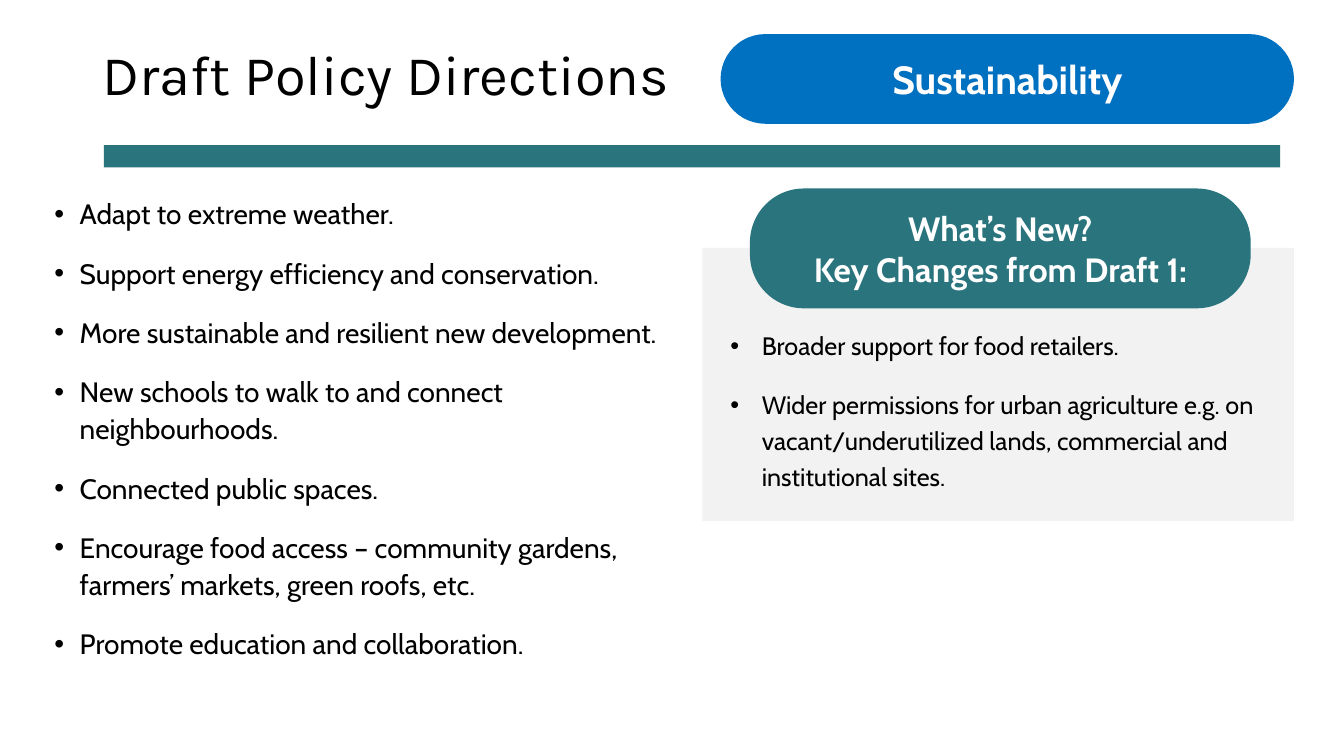
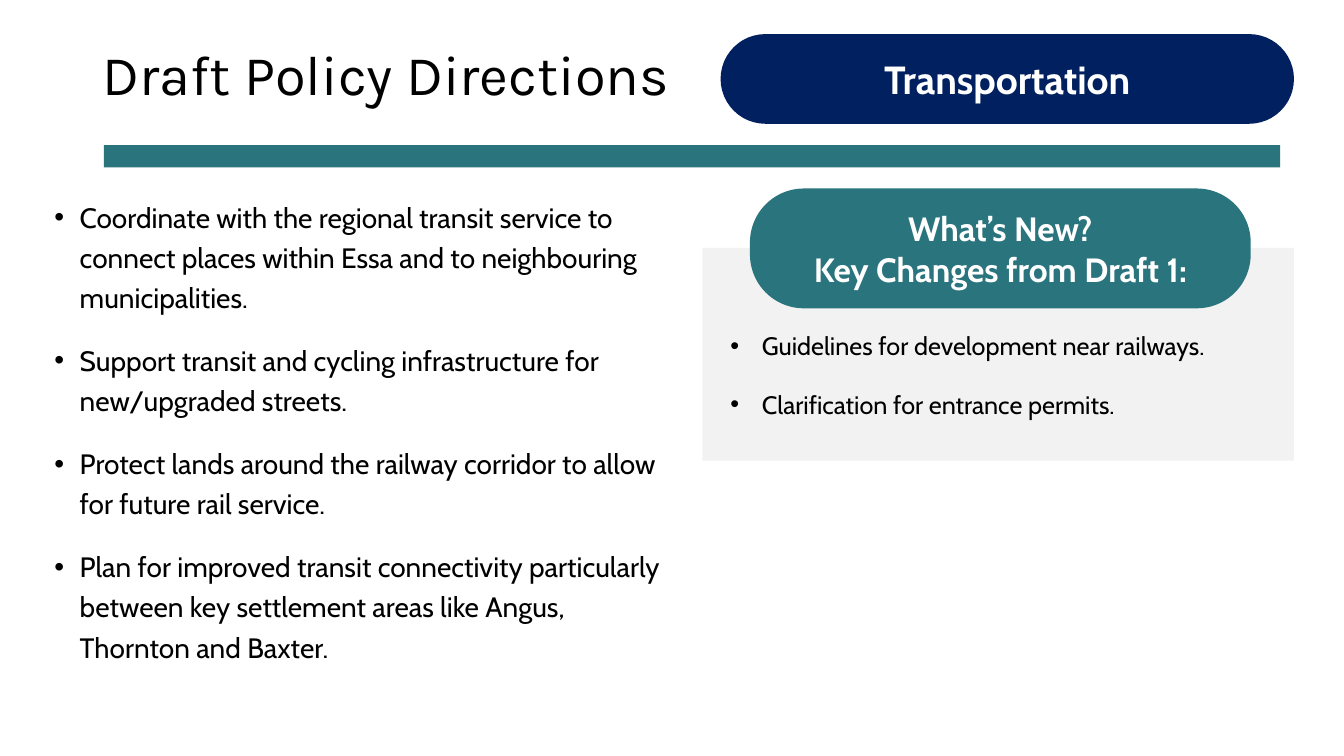
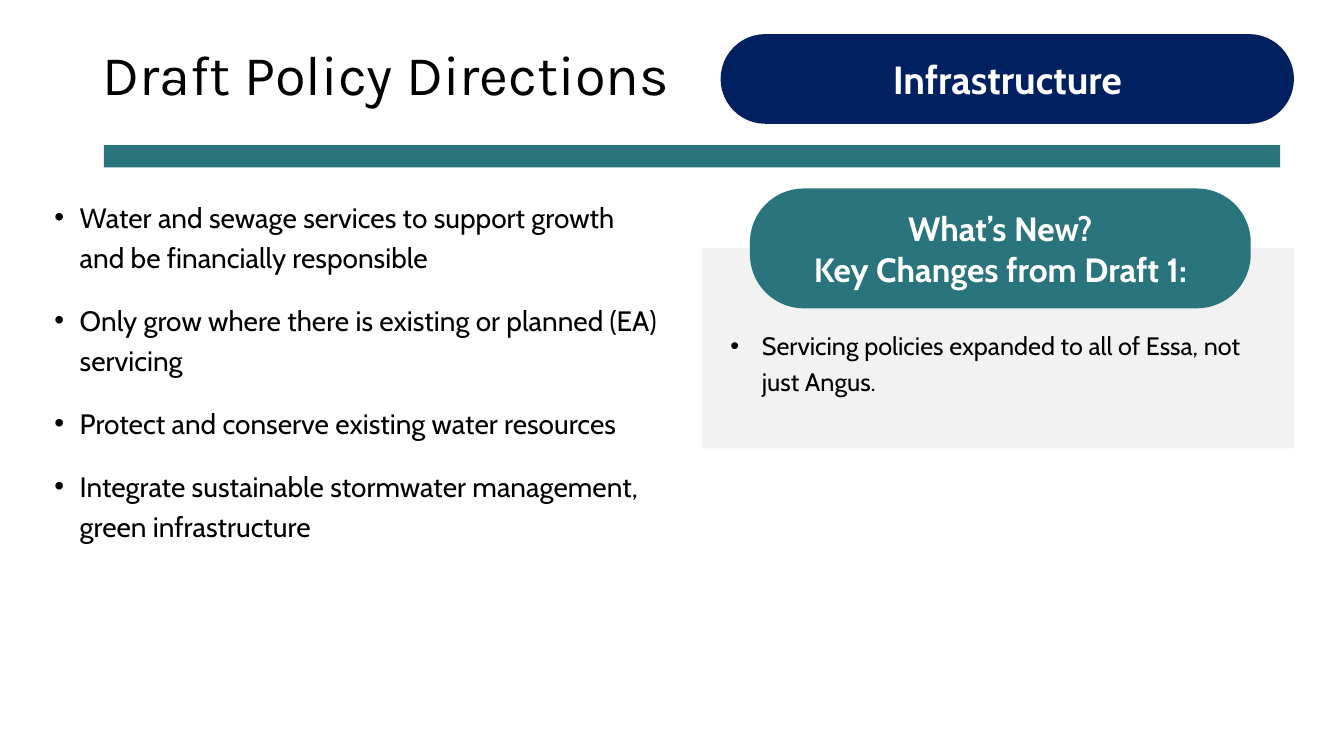
from lxml import etree
from pptx import Presentation
from pptx.dml.color import RGBColor
from pptx.enum import shapes, text
from pptx.oxml.ns import qn
from pptx.util import Cm, Pt

BLACK = RGBColor(0x00, 0x00, 0x00)
WHITE = RGBColor(0xFF, 0xFF, 0xFF)
TEAL = RGBColor(0x2A, 0x74, 0x7E)
BLUE = RGBColor(0x00, 0x70, 0xC0)
NAVY = RGBColor(0x00, 0x20, 0x60)
PALE_GREY = RGBColor(0xF2, 0xF2, 0xF2)
TITLE_FONT = "Karla"
BODY_FONT = "Cabin"

TOPICS = [
    dict(
        name="Sustainability", color=BLUE, spacing=1.1, panel_height=6.88, changes_height=4.47,
        directions=[
            "Adapt to extreme weather.",
            "Support energy efficiency and conservation.",
            "More sustainable and resilient new development.",
            "New schools to walk to and connect neighbourhoods.",
            "Connected public spaces.",
            "Encourage food access – community gardens, farmers’ markets, green roofs, etc.",
            "Promote education and collaboration.",
        ],
        changes=[
            "Broader support for food retailers.",
            "Wider permissions for urban agriculture e.g. on vacant/underutilized lands, "
            "commercial and institutional sites.",
        ],
    ),
    dict(
        name="Transportation", color=NAVY, spacing=1.2, panel_height=5.36, changes_height=4.11,
        directions=[
            "Coordinate with the regional transit service to connect places within Essa "
            "and to neighbouring municipalities.",
            "Support transit and cycling infrastructure for new/upgraded streets.",
            "Protect lands around the railway corridor to allow for future rail service.",
            "Plan for improved transit connectivity particularly between key settlement "
            "areas like Angus, Thornton and Baxter.",
        ],
        changes=[
            "Guidelines for development near railways.",
            "Clarification for entrance permits.",
        ],
    ),
    dict(
        name="Infrastructure", color=NAVY, spacing=1.2, panel_height=5.05, changes_height=2.06,
        directions=[
            "Water and sewage services to support growth and be financially responsible",
            "Only grow where there is existing or planned (EA) servicing",
            "Protect and conserve existing water resources",
            "Integrate sustainable stormwater management, green infrastructure",
        ],
        changes=["Servicing policies expanded to all of Essa, not just Angus."],
    ),
]


def add_bullet(paragraph, indent):
    """Give the paragraph a round bullet with a hanging indent."""
    properties = paragraph._p.get_or_add_pPr()
    properties.set("marL", str(Cm(indent)))
    properties.set("indent", str(-Cm(indent)))
    etree.SubElement(properties, qn("a:buFont")).set("typeface", "Arial")
    etree.SubElement(properties, qn("a:buChar")).set("char", "•")


def write(frame, lines, size, font=BODY_FONT, color=BLACK, bold=False,
          align=text.PP_ALIGN.LEFT, anchor=text.MSO_ANCHOR.TOP, spacing=1.0, indent=None):
    """Fill a text frame with one paragraph per line; an indent makes them bullets."""
    frame.word_wrap = True
    frame.vertical_anchor = anchor
    for index, line in enumerate(lines):
        paragraph = frame.add_paragraph() if index else frame.paragraphs[0]
        if indent:
            add_bullet(paragraph, indent)
            paragraph.space_before = Pt(10 if index else 0)
            paragraph.space_after = Pt(6)
        paragraph.alignment = align
        paragraph.line_spacing = spacing
        run = paragraph.add_run()
        run.text = line
        run.font.name = font
        run.font.size = Pt(size)
        run.font.bold = bold
        run.font.color.rgb = color


class PolicyDeck:
    """Holds the presentation, its shared style and the current slide."""

    def __init__(self):
        self.presentation = Presentation()
        self.presentation.slide_width = Cm(33.87)
        self.presentation.slide_height = Cm(19.05)
        self.slide = None

    def add_slide(self):
        self.slide = self.presentation.slides.add_slide(self.presentation.slide_layouts[6])

    def block(self, left, top, width, height, color, kind=shapes.MSO_SHAPE.RECTANGLE):
        shape = self.slide.shapes.add_shape(kind, Cm(left), Cm(top), Cm(width), Cm(height))
        shape.shadow.inherit = False
        shape.fill.solid()
        shape.fill.fore_color.rgb = color
        shape.line.fill.background()
        return shape

    def pill(self, left, top, width, height, color, lines, size, rounding):
        shape = self.block(left, top, width, height, color, shapes.MSO_SHAPE.ROUNDED_RECTANGLE)
        shape.adjustments[0] = rounding
        write(shape.text_frame, lines, size, color=WHITE, bold=True,
              align=text.PP_ALIGN.CENTER, anchor=text.MSO_ANCHOR.MIDDLE)

    def text_box(self, left, top, width, height, lines, size, **style):
        box = self.slide.shapes.add_textbox(Cm(left), Cm(top), Cm(width), Cm(height))
        write(box.text_frame, lines, size, **style)
        return box

    def header(self, name, color):
        self.text_box(2.34, 1.02, 29.21, 1.85, ["Draft Policy Directions"], 40,
                      font=TITLE_FONT, anchor=text.MSO_ANCHOR.MIDDLE, spacing=0.9)
        self.block(2.62, 3.66, 29.64, 0.56, TEAL)
        self.pill(18.16, 0.86, 14.45, 2.26, color, [name], 28, 0.5)

    def whats_new(self, changes, height):
        self.pill(18.9, 4.75, 12.62, 3.02, TEAL,
                  ["What’s New?", "Key Changes from Draft 1:"], 24, 0.45)
        box = self.text_box(18.16, 8.05, 13.74, height, changes, 18, spacing=1.2, indent=0.79)
        box.text_frame.auto_size = text.MSO_AUTO_SIZE.SHAPE_TO_FIT_TEXT

    def topic(self, name, color, spacing, panel_height, changes_height, directions, changes):
        self.add_slide()
        self.block(17.7, 6.25, 14.91, panel_height, PALE_GREY)
        self.header(name, color)
        self.whats_new(changes, changes_height)
        self.text_box(1.12, 4.75, 15.8, 13.31, directions, 20, spacing=spacing, indent=0.64)


def main():
    deck = PolicyDeck()
    for topic in TOPICS:
        deck.topic(**topic)
    deck.presentation.save("out.pptx")


if __name__ == "__main__":
    main()
